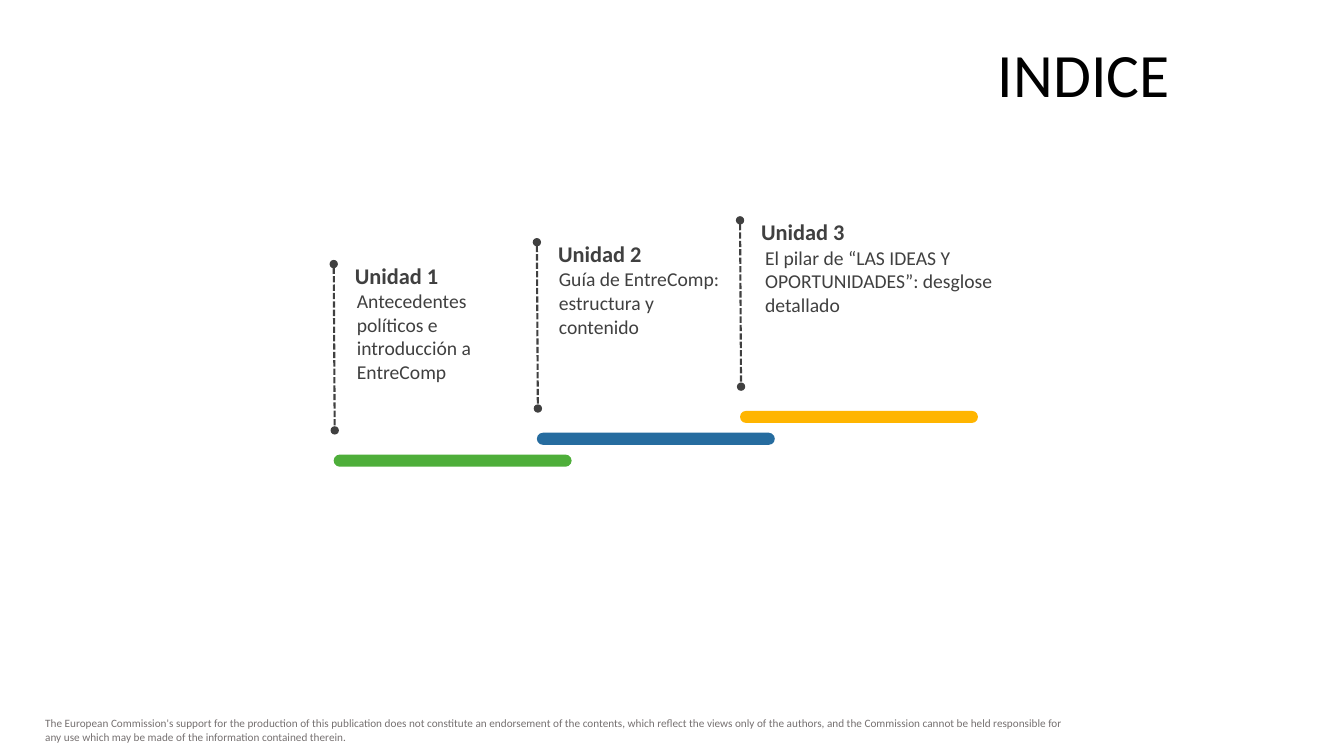
from lxml import etree
from pptx import Presentation
from pptx.dml.color import RGBColor
from pptx.enum.dml import MSO_LINE
from pptx.enum.shapes import MSO_CONNECTOR, MSO_SHAPE
from pptx.enum.text import MSO_ANCHOR, PP_ALIGN
from pptx.oxml.ns import qn
from pptx.util import Inches, Pt

BLACK = RGBColor(0x00, 0x00, 0x00)
DARK = RGBColor(0x40, 0x40, 0x40)
GREY = RGBColor(0x76, 0x71, 0x71)
GREEN = RGBColor(0x4E, 0xAE, 0x3A)
BLUE = RGBColor(0x26, 0x6C, 0x9F)
YELLOW = RGBColor(0xFF, 0xB5, 0x00)

TITLE = "INDICE"
DISCLAIMER = (
    "The European Commission's support for the production of this publication "
    "does not constitute an endorsement of the contents, which reflect the views "
    "only of the authors, and the Commission cannot be held responsible for any "
    "use which may be made of the information contained therein."
)
# heading, description, bar colour, description indent, width and height
UNITS = [
    ("Unidad 1", "Antecedentes políticos e introducción a EntreComp",
     GREEN, 0.13, 1.72, 1.04),
    ("Unidad 2", "Guía de EntreComp: estructura y contenido",
     BLUE, 0.12, 1.9, 0.81),
    ("Unidad 3", "El pilar de “LAS IDEAS Y OPORTUNIDADES”: desglose detallado",
     YELLOW, 0.15, 2.63, 0.81),
]
FIRST_LEFT, FIRST_TOP = 3.31, 2.62
STEP_RIGHT, STEP_UP = 2.015, 0.217
BAR_WIDTH, BAR_HEIGHT, BAR_DROP = 2.36, 0.12, 1.89
LINE_HEIGHT = 1.65


def add_text(page, text, left, top, width, height, size, color, bold=False, inset=0.1):
    box = page.shapes.add_textbox(
        Inches(left), Inches(top), Inches(width), Inches(height))
    frame = box.text_frame
    frame.word_wrap = True
    frame.margin_left = frame.margin_right = Inches(inset)
    para = frame.paragraphs[0]
    para.text = text
    para.font.name = "Calibri"
    para.font.size = Pt(size)
    para.font.bold = bold
    para.font.color.rgb = color
    return frame


def add_marker(page, left, top):
    """Draw a dashed line with a dot at each end."""
    marker = page.shapes.add_connector(
        MSO_CONNECTOR.STRAIGHT, Inches(left), Inches(top),
        Inches(left + 0.01), Inches(top + LINE_HEIGHT))
    marker.line.color.rgb = DARK
    marker.line.width = Pt(1.5)
    marker.line.dash_style = MSO_LINE.SQUARE_DOT
    outline = marker.line._get_or_add_ln()
    for end in ("a:headEnd", "a:tailEnd"):
        etree.SubElement(outline, qn(end), type="oval")
    etree.SubElement(marker._element.spPr, qn("a:effectLst"))


def add_bar(page, left, top, color):
    bar = page.shapes.add_shape(
        MSO_SHAPE.ROUNDED_RECTANGLE, Inches(left), Inches(top),
        Inches(BAR_WIDTH), Inches(BAR_HEIGHT))
    bar.adjustments[0] = 0.5
    bar.shadow.inherit = False
    bar.fill.solid()
    bar.fill.fore_color.rgb = color
    bar.line.fill.background()


def main():
    deck = Presentation()
    deck.slide_width, deck.slide_height = Inches(13.33), Inches(7.5)
    page = deck.slides.add_slide(deck.slide_layouts[6])

    add_text(page, DISCLAIMER, 0.35, 7.06, 10.46, 0.37, 8, GREY)
    title = add_text(page, TITLE, 3.09, 0.37, 8.61, 0.79, 44, BLACK)
    title.vertical_anchor = MSO_ANCHOR.MIDDLE
    title.paragraphs[0].alignment = PP_ALIGN.RIGHT
    title.paragraphs[0].line_spacing = 0.9

    for index, (heading, description, color, indent, width, height) in enumerate(UNITS):
        left = FIRST_LEFT + index * STEP_RIGHT
        top = FIRST_TOP - index * STEP_UP
        add_bar(page, left, top + BAR_DROP, color)
        add_text(page, description, left + indent, top + 0.2, width, height, 14, DARK)
        add_text(page, heading, left + 0.09, top - 0.07, 1.73, 0.37, 16, DARK,
                 bold=True, inset=0.12)
        add_marker(page, left, top)

    deck.save("out.pptx")


if __name__ == "__main__":
    main()
